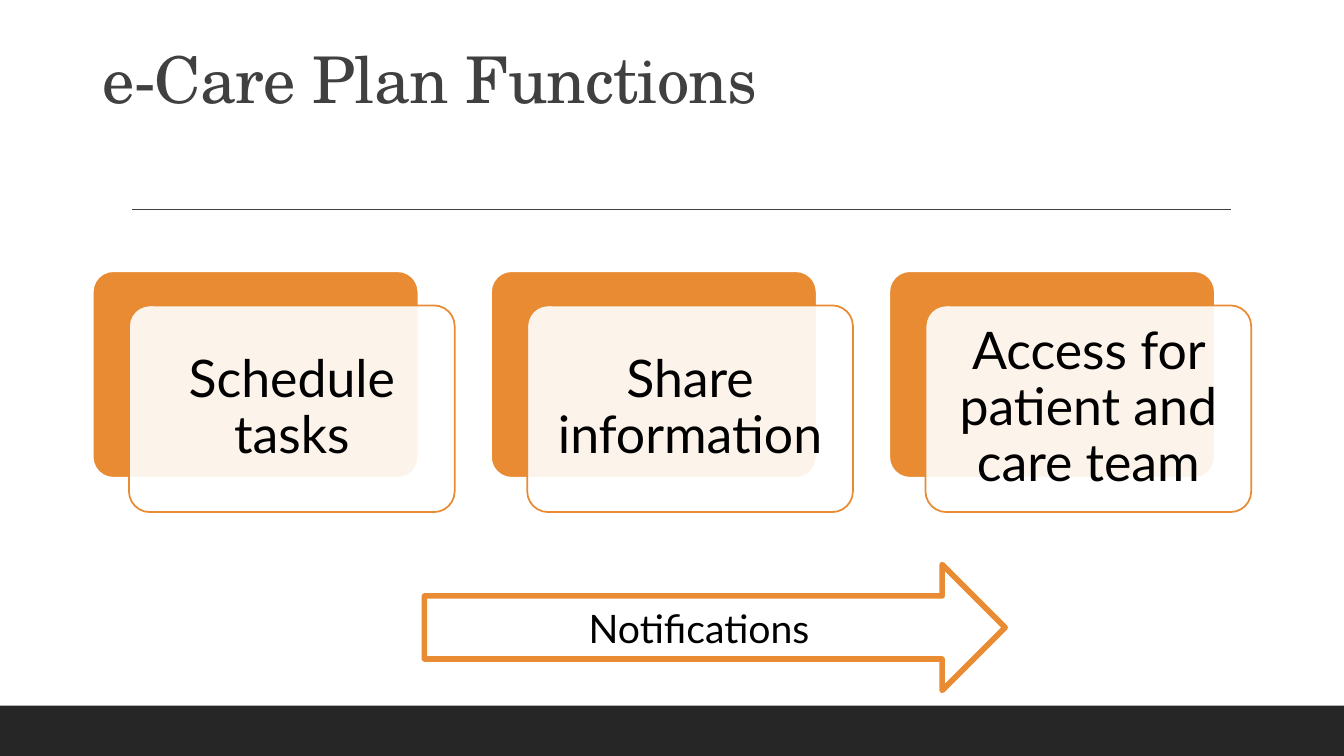
from lxml import etree
from pptx import Presentation
from pptx import util as u
from pptx.dml.color import RGBColor
from pptx.enum import shapes, text
from pptx.oxml.ns import qn

ORANGE, DARK, GREY, WHITE, BLACK = "E88B33", "262626", "404040", "FFFFFF", "000000"
KIND = shapes.MSO_SHAPE


def add_box(kind, left, top, width, height, fill=None, line=None, line_width=1.25):
    """Add a preset shape, in inches, with no shadow; None means no fill or no line."""
    shape = slide.shapes.add_shape(kind, *map(u.Inches, (left, top, width, height)))
    shape.shadow.inherit = False
    if fill:
        shape.fill.solid()
        shape.fill.fore_color.rgb = RGBColor.from_string(fill)
    else:
        shape.fill.background()
    if line:
        shape.line.color.rgb = RGBColor.from_string(line)
        shape.line.width = u.Pt(line_width)
    else:
        shape.line.fill.background()
    return shape


def write(shape, words, size, font="Lato", color=BLACK, align=text.PP_ALIGN.CENTER,
          line_spacing=1.0, inset=None):
    frame = shape.text_frame
    frame.word_wrap = True
    frame.vertical_anchor = text.MSO_ANCHOR.MIDDLE
    if inset is not None:
        frame.margin_left = frame.margin_right = u.Inches(inset)
        frame.margin_top = frame.margin_bottom = u.Inches(inset)
    paragraph = frame.paragraphs[0]
    paragraph.alignment = align
    paragraph.line_spacing = line_spacing
    run = paragraph.add_run()
    run.text = words
    run.font.size = u.Pt(size)
    run.font.name = font
    run.font.color.rgb = RGBColor.from_string(color)
    return run


presentation = Presentation()
presentation.slide_width = u.Inches(13.33)
presentation.slide_height = u.Inches(7.5)
slide = presentation.slides.add_slide(presentation.slide_layouts[6])

# Footer band and rule under the title
add_box(KIND.RECTANGLE, 0, 7, 13.33, 0.5, fill=DARK)
rule = slide.shapes.add_connector(
    shapes.MSO_CONNECTOR.STRAIGHT, *map(u.Inches, (1.31, 2.08, 12.21, 2.08)))
rule.line.color.rgb = RGBColor.from_string(GREY)
rule.line.width = u.Pt(1)
etree.SubElement(rule.line._get_or_add_ln().getparent(), qn("a:effectLst"))

# Title
title = slide.shapes.add_textbox(*map(u.Inches, (0.92, 0.27, 11.49, 1.1)))
title_run = write(title, "e-Care Plan Functions", 46, font="TeX Gyre Schola", color=GREY,
                  align=text.PP_ALIGN.LEFT, line_spacing=0.9)
title_run.font._element.set("spc", "-50")

# Three functions: an orange plate with a translucent card shifted over it
LEFT, TOP, PITCH = 0.92, 2.69, 3.95
WIDTH, HEIGHT = 3.23, 2.05
SHIFT_X, SHIFT_Y = 0.36, 0.34
functions = ["Schedule tasks", "Share information", "Access for patient and care team"]
for column, words in enumerate(functions):
    left = LEFT + column * PITCH
    plate = add_box(KIND.ROUNDED_RECTANGLE, left, TOP, WIDTH, HEIGHT, ORANGE, WHITE)
    card = add_box(KIND.ROUNDED_RECTANGLE, left + SHIFT_X, TOP + SHIFT_Y,
                   WIDTH, HEIGHT, WHITE, ORANGE)
    for shape in (plate, card):
        shape.adjustments[0] = 0.1
    card_color = card._element.spPr.find(qn("a:solidFill"))[0]
    etree.SubElement(card_color, qn("a:alpha"), val="90000")
    write(card, words, 37, line_spacing=0.9, inset=0.15)

# Notifications arrow
arrow = add_box(KIND.RIGHT_ARROW, 4.21, 5.6, 5.76, 1.25, line=ORANGE, line_width=4)
write(arrow, "Notifications", 28)

presentation.save("out.pptx")
